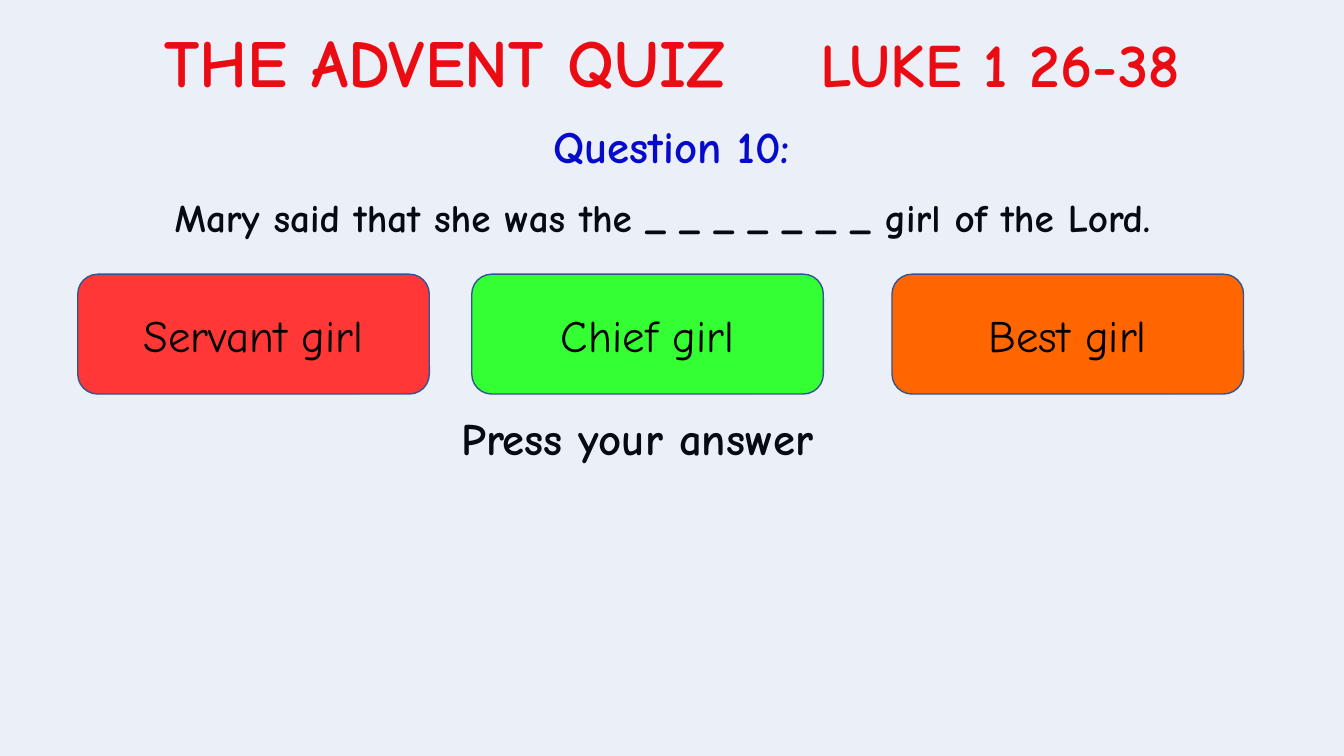
"""Builds the Advent quiz slide with one question and three answer buttons."""
import lxml.etree
import pptx
import pptx.dml.color
import pptx.enum.shapes
import pptx.enum.text
import pptx.oxml
import pptx.oxml.ns
import pptx.util

COLOURS = {
    "title": "FF0000",
    "title_edge": "0000FF",
    "number": "0000CC",
    "ink": "000000",
    "tint": "4472C4",
    "border": "325491",
    "servant": "FF3737",
    "chief": "33FF33",
    "best": "FF6600",
}
CENTRE = pptx.enum.text.PP_ALIGN.CENTER
MIDDLE = pptx.enum.text.MSO_ANCHOR.MIDDLE
SHAPES = pptx.enum.shapes.MSO_SHAPE


def rgb(colour):
    return pptx.dml.color.RGBColor.from_string(COLOURS[colour])


def apply_format(target, values):
    for name, value in values.items():
        setattr(target, name, value)


class QuizSlide:
    def __init__(self, slide, font_name):
        self.slide = slide
        self.font_name = font_name

    def add_words(self, paragraph, words, size, colour="ink", bold=True):
        run = paragraph.add_run()
        run.text = words
        apply_format(run.font, {"name": self.font_name, "size": pptx.util.Pt(size), "bold": bold})
        run.font.color.rgb = rgb(colour)
        return run

    def textbox(self, box, wrap=True, **paragraph_format):
        frame = self.slide.shapes.add_textbox(*map(pptx.util.Cm, box)).text_frame
        frame.word_wrap = wrap
        paragraph = frame.paragraphs[0]
        apply_format(paragraph, paragraph_format)
        return paragraph

    def heading(self, box, parts, gap):
        paragraph = self.textbox(box, wrap=False, alignment=CENTRE)
        for words, size in parts:
            run = self.add_words(paragraph, words, size, "title")
            properties = run._r.get_or_add_rPr()
            edge = pptx.oxml.parse_xml(
                f'<a:ln {pptx.oxml.ns.nsdecls("a")} w="13462"><a:solidFill>'
                f'<a:srgbClr val="{COLOURS["title_edge"]}"/></a:solidFill></a:ln>')
            properties.insert(0, edge)
            if words == " ":
                properties.set("spc", str(gap * 100))

    def shape(self, kind, box, fill):
        shape = self.slide.shapes.add_shape(kind, *map(pptx.util.Cm, box))
        shape.shadow.inherit = False
        shape.fill.solid()
        shape.fill.fore_color.rgb = rgb(fill)
        shape.line.color.rgb = rgb("border")
        shape.line.width = pptx.util.Pt(1)
        return shape

    def tint(self, box, opacity):
        veil = self.shape(SHAPES.RECTANGLE, box, "tint")
        colour = veil._element.spPr.find(".//" + pptx.oxml.ns.qn("a:srgbClr"))
        alpha = lxml.etree.SubElement(colour, pptx.oxml.ns.qn("a:alpha"))
        alpha.set("val", str(opacity * 1000))

    def button(self, box, answer, fill):
        frame = self.shape(SHAPES.ROUNDED_RECTANGLE, box, fill).text_frame
        apply_format(frame, {"word_wrap": True, "vertical_anchor": MIDDLE})
        frame.paragraphs[0].alignment = CENTRE
        self.add_words(frame.paragraphs[0], answer, 32, bold=False)


def main():
    deck = pptx.Presentation()
    apply_format(deck, {"slide_width": pptx.util.Cm(33.87), "slide_height": pptx.util.Cm(19.05)})
    quiz = QuizSlide(deck.slides.add_slide(deck.slide_layouts[6]), "Comic Neue")

    quiz.heading((0.56, 0.38, 32.77, 2.31),
                 [("THE ADVENT QUIZ", 48), (" ", 48), ("LUKE 1 26-38", 44)], gap=51)

    question = quiz.textbox((1.47, 4.67, 30.45, 3.02), alignment=CENTRE,
                            line_spacing=pptx.util.Pt(36), space_before=pptx.util.Pt(10))
    quiz.add_words(question, "Mary said that she was the _ _ _ _ _ _ _ girl of the Lord.", 28)

    prompt = quiz.textbox((11.38, 10.39, 17.09, 1.83),
                          line_spacing=0.9, space_before=pptx.util.Pt(7.5))
    quiz.add_words(prompt, "Press your answer", 32)

    number = quiz.textbox((11.33, 2.87, 11.2, 1.63), alignment=CENTRE)
    quiz.add_words(number, "Question 10:", 32, "number")

    quiz.tint((-1.09, -1.14, 36.04, 22.17), opacity=10)

    answers = [(1.96, "Servant girl", "servant"),
               (11.89, "Chief girl", "chief"),
               (22.48, "Best girl", "best")]
    for left, answer, fill in answers:
        quiz.button((left, 6.91, 8.86, 3.02), answer, fill)

    deck.save("out.pptx")


if __name__ == "__main__":
    main()
